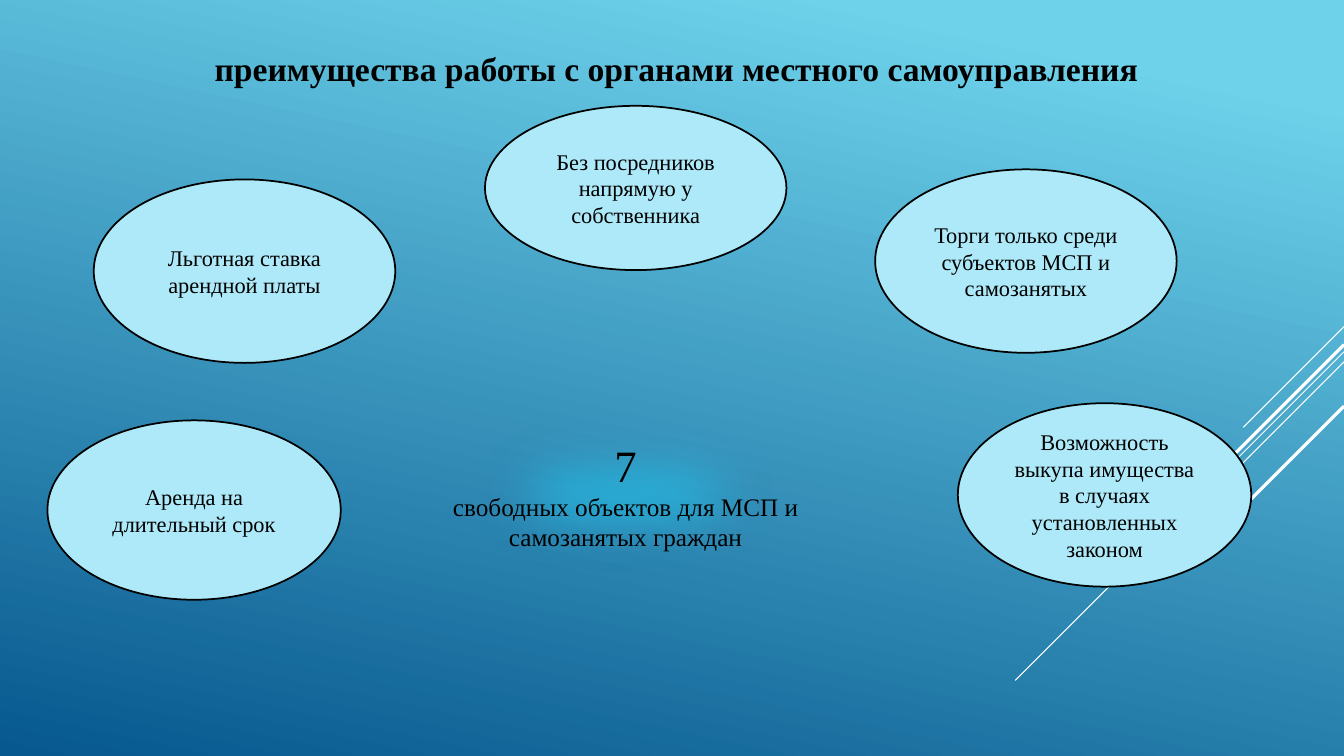
from lxml import etree
from pptx import Presentation
from pptx import util as u
from pptx.dml.color import RGBColor
from pptx.enum import shapes, text
from pptx.oxml import ns


def color(value):
    return RGBColor.from_string(value)


class SlideBuilder:
    font = "Times New Roman"
    ink = "000000"
    ellipse_fill = "ADE9F8"
    glow_fill = "22C5ED"
    stripe = "FFFFFF"

    def __init__(self, slide):
        self.slide = slide

    def background(self, stops, angle):
        fill = self.slide.background.fill
        fill.gradient()
        fill.gradient_angle = 360 - angle
        for stop, (position, value) in zip(fill.gradient_stops, stops):
            stop.position = position
            stop.color.rgb = color(value)

    def line(self, start, end, width):
        points = [u.Inches(value) for value in (*start, *end)]
        connector = self.slide.shapes.add_connector(
            shapes.MSO_CONNECTOR.STRAIGHT, *points)
        connector.line.color.rgb = color(self.stripe)
        connector.line.width = u.Pt(width)
        etree.SubElement(connector._element.spPr, ns.qn("a:effectLst"))

    def set_text(self, shape, paragraphs, align, bold=False):
        frame = shape.text_frame
        frame.word_wrap = True
        frame.text = "\n".join(words for words, size in paragraphs)
        for paragraph, (words, size) in zip(frame.paragraphs, paragraphs):
            paragraph.alignment = align
            for run in paragraph.runs:
                run.font.name = self.font
                run.font.size = u.Pt(size)
                run.font.bold = bold
                run.font.color.rgb = color(self.ink)

    def shape(self, kind, box, fill, paragraphs):
        shape = self.slide.shapes.add_shape(kind, *[u.Inches(value) for value in box])
        shape.shadow.inherit = False
        shape.fill.solid()
        shape.fill.fore_color.rgb = color(fill)
        shape.text_frame.vertical_anchor = text.MSO_ANCHOR.MIDDLE
        self.set_text(shape, paragraphs, text.PP_ALIGN.CENTER)
        return shape

    def ellipse(self, box, words):
        shape = self.shape(shapes.MSO_SHAPE.OVAL, box, self.ellipse_fill, [(words, 16)])
        shape.line.color.rgb = color(self.ink)
        shape.line.width = u.Pt(1.25)

    def soft_panel(self, box, paragraphs, radius):
        shape = self.shape(shapes.MSO_SHAPE.RECTANGLE, box, self.glow_fill, paragraphs)
        shape.line.fill.background()
        effects = shape._element.spPr.find(ns.qn("a:effectLst"))
        etree.SubElement(effects, ns.qn("a:softEdge"), rad=str(u.Pt(radius)))

    def title(self, box, words):
        shape = self.slide.shapes.add_textbox(*[u.Inches(value) for value in box])
        self.set_text(shape, [(words, 24)], text.PP_ALIGN.LEFT, bold=True)


def main():
    presentation = Presentation()
    presentation.slide_width = u.Inches(13.33)
    presentation.slide_height = u.Inches(7.5)
    slide = presentation.slides.add_slide(presentation.slide_layouts[6])
    builder = SlideBuilder(slide)

    # Background
    builder.background([(0.1, "6ED2EB"), (1, "06588E")], angle=102)

    # Diagonal stripes: top at the right edge, run down at 45 degrees, width
    right = 13.33
    for top, run, width in [(3.24, 1, 0.75), (3.49, 3.26, 0.75), (3.59, 2.07, 0.75),
                            (3.42, 1.91, 2.25), (4.03, 1.39, 2.25)]:
        builder.line((right, top), (right - run, top + run), width)

    # Advantages
    advantages = [
        ((0.93, 1.78, 2.99, 1.82), "Льготная ставка арендной платы"),
        ((0.47, 4.17, 2.91, 1.78), "Аренда на длительный срок"),
        ((8.68, 1.68, 2.99, 1.82), "Торги только среди субъектов МСП и самозанятых"),
        ((9.5, 4, 2.91, 1.82),
         "Возможность выкупа имущества в случаях установленных законом"),
        ((4.81, 1.05, 2.99, 1.63), "Без посредников напрямую у собственника"),
    ]
    for box, words in advantages:
        builder.ellipse(box, words)

    # Number of free properties
    builder.soft_panel(
        (4.32, 3.87, 3.77, 2.07),
        [("7", 32), ("свободных объектов для МСП и самозанятых граждан", 18)],
        radius=50)

    # Title
    builder.title((2.03, 0.43, 9.51, 0.5),
                  "преимущества работы с органами местного самоуправления")

    presentation.save("out.pptx")


if __name__ == "__main__":
    main()
